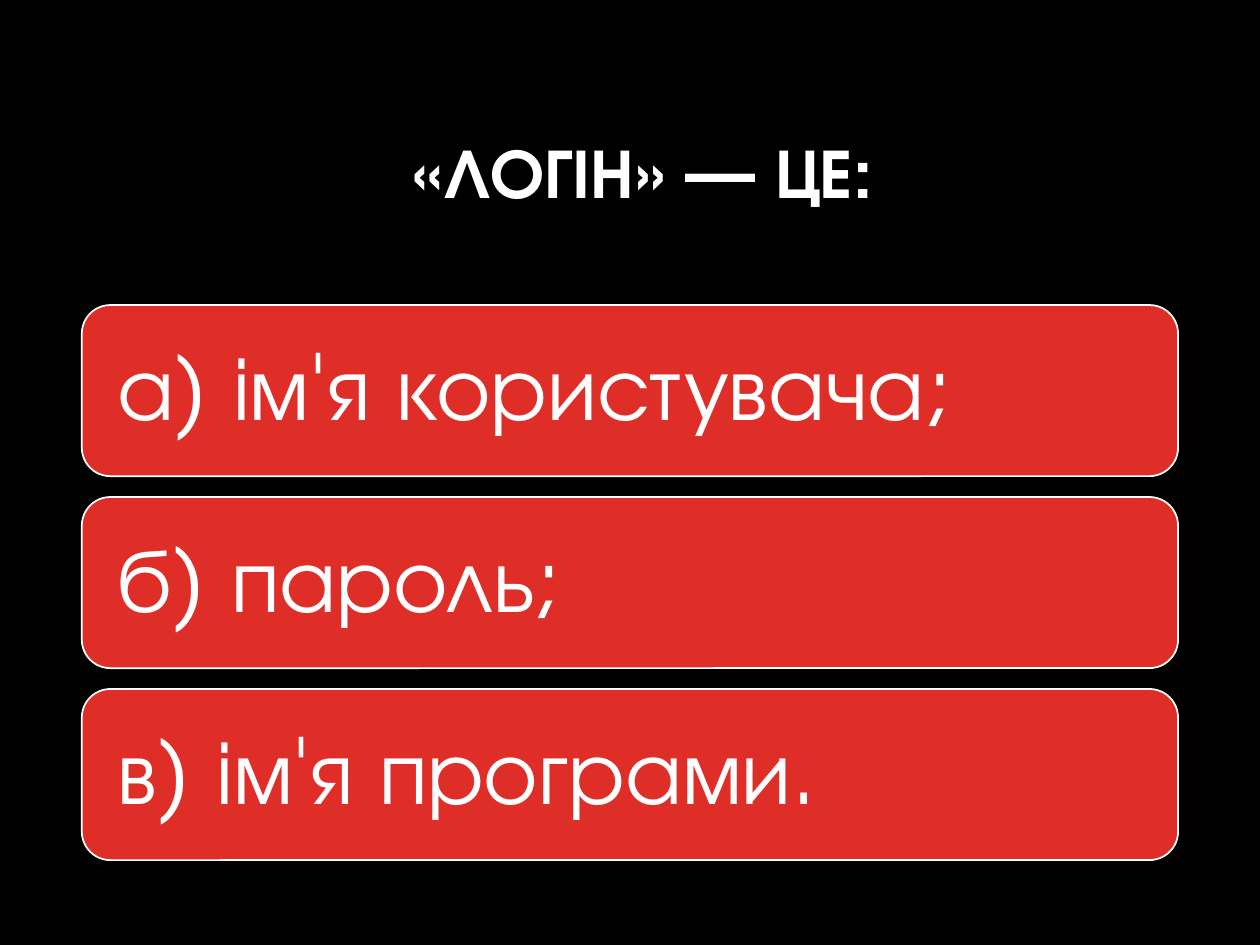
from pptx import Presentation
from pptx.dml.color import RGBColor
from pptx.enum.shapes import MSO_SHAPE
from pptx.enum.text import MSO_ANCHOR, PP_ALIGN
from pptx.util import Cm, Pt

ANSWERS = ["а) ім'я користувача;", "б) пароль;", "в) ім'я програми."]
LEFT, TOP, WIDTH, HEIGHT, STEP = 1.65, 6.15, 22.1, 3.45, 3.87


def paint(color):
    return RGBColor.from_string(color)


def style(target, values):
    for name, value in values.items():
        setattr(target, name, value)


class Quiz:
    face = "TeX Gyre Adventor"
    back, ink, card = "000000", "FFFFFF", "DF2E28"

    def __init__(self, deck):
        self.slide = deck.slides.add_slide(deck.slide_layouts[6])
        self.fill(self.slide.background, self.back)

    def fill(self, item, color):
        item.fill.solid()
        item.fill.fore_color.rgb = paint(color)

    def label(self, shape, text, size, bold, align, insets):
        """Set one styled line; insets are left, top, right, bottom in cm."""
        left, top, right, bottom = map(Cm, insets)
        frame = shape.text_frame
        style(frame, {"word_wrap": True, "vertical_anchor": MSO_ANCHOR.MIDDLE,
                      "margin_left": left, "margin_top": top,
                      "margin_right": right, "margin_bottom": bottom})
        line = frame.paragraphs[0]
        style(line, {"text": text, "alignment": align, "line_spacing": 0.9})
        font = line.runs[0].font
        style(font, {"name": self.face, "size": Pt(size), "bold": bold})
        font.color.rgb = paint(self.ink)

    def title(self, text, *place):
        box = self.slide.shapes.add_textbox(*map(Cm, place))
        self.label(box, text, 40, True, PP_ALIGN.RIGHT, (0.25, 0.13, 0.64, 1.65))

    def answer(self, text, *place):
        shape = self.slide.shapes.add_shape(
            MSO_SHAPE.ROUNDED_RECTANGLE, *map(Cm, place))
        shape.shadow.inherit = False
        self.fill(shape, self.card)
        shape.line.color.rgb = paint(self.ink)
        shape.line.width = Pt(1)
        self.label(shape, text, 52, False, PP_ALIGN.LEFT, (0.56,) * 4)


def main():
    deck = Presentation()
    style(deck, {"slide_width": Cm(25.4), "slide_height": Cm(19.05)})
    quiz = Quiz(deck)
    quiz.title("«ЛОГІН» — ЦЕ:", 7.19, 2.51, 11.05, 3.58)
    for row, text in enumerate(ANSWERS):
        quiz.answer(text, LEFT, TOP + row * STEP, WIDTH, HEIGHT)
    deck.save("out.pptx")


if __name__ == "__main__":
    main()
